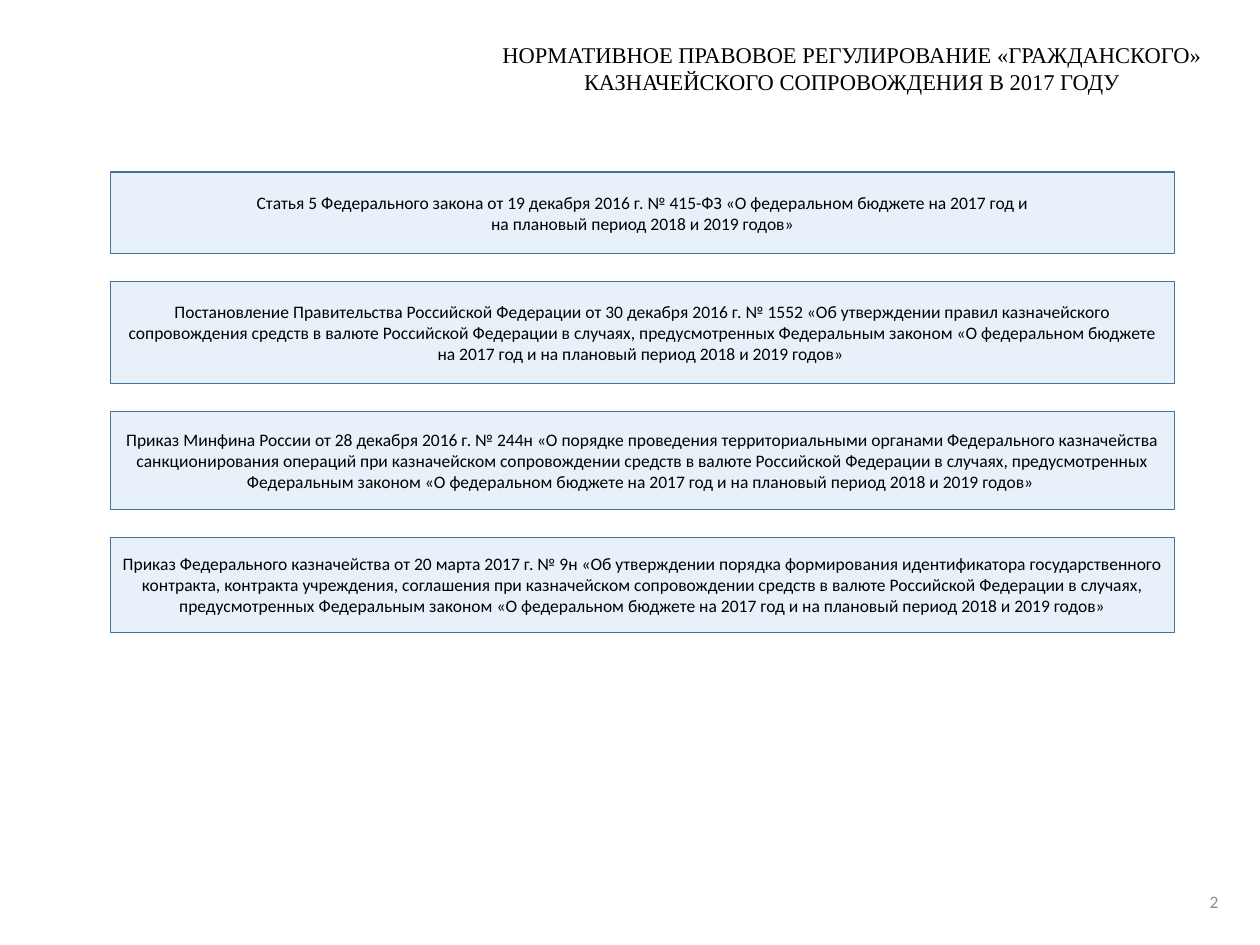
from dataclasses import dataclass

from lxml.etree import SubElement
from pptx import Presentation
from pptx.dml.color import RGBColor
from pptx.enum.shapes import MSO_SHAPE
from pptx.enum.text import MSO_ANCHOR, MSO_AUTO_SIZE, PP_ALIGN
from pptx.oxml.ns import qn
from pptx.util import Inches, Pt

TITLE = "НОРМАТИВНОЕ ПРАВОВОЕ РЕГУЛИРОВАНИЕ «ГРАЖДАНСКОГО» КАЗНАЧЕЙСКОГО СОПРОВОЖДЕНИЯ В 2017 ГОДУ"
PAGE_NUMBER = "2"

REGULATIONS = [
    (0.91, "Статья 5 Федерального закона от 19 декабря 2016 г. № 415-ФЗ «О федеральном бюджете на 2017 год и\n"
           "на плановый период 2018 и 2019 годов»"),
    (1.13, "Постановление Правительства Российской Федерации от 30 декабря 2016 г. № 1552 "
           "«Об утверждении правил казначейского сопровождения средств в валюте Российской Федерации "
           "в случаях, предусмотренных Федеральным законом «О федеральном бюджете на 2017 год "
           "и на плановый период 2018 и 2019 годов» "),
    (1.09, "Приказ Минфина России от 28 декабря 2016 г. № 244н «О порядке проведения территориальными "
           "органами Федерального казначейства санкционирования операций при казначейском сопровождении "
           "средств в валюте Российской Федерации в случаях, предусмотренных Федеральным законом "
           "«О федеральном бюджете на 2017 год и на плановый период 2018 и 2019 годов» "),
    (1.06, "Приказ Федерального казначейства от 20 марта 2017 г. № 9н «Об утверждении порядка "
           "формирования идентификатора государственного контракта, контракта учреждения, соглашения "
           "при казначейском сопровождении средств в валюте Российской Федерации в случаях, "
           "предусмотренных Федеральным законом «О федеральном бюджете на 2017 год "
           "и на плановый период 2018 и 2019 годов»"),
]

BOX_LEFT, BOX_TOP, BOX_WIDTH, BOX_GAP = 1.23, 1.91, 11.82, 0.31


@dataclass(frozen=True)
class Theme:
    ink: str = "000000"
    muted: str = "8C8C8C"
    box_fill: str = "DEEBF7"
    box_opacity: int = 69
    box_line: str = "43739E"
    title_font: str = "Times New Roman"
    body_font: str = "Calibri"
    title_size: int = 18
    body_size: int = 14


THEME = Theme()


def write_text(shape, text, font=THEME.body_font, size=THEME.body_size, color=THEME.ink,
               align=PP_ALIGN.CENTER, anchor=MSO_ANCHOR.MIDDLE, margins=(0.1, 0.05)):
    frame = shape.text_frame
    frame.text = text
    frame.word_wrap = True
    frame.auto_size = MSO_AUTO_SIZE.NONE
    frame.vertical_anchor = anchor
    frame.margin_left = frame.margin_right = Inches(margins[0])
    frame.margin_top = frame.margin_bottom = Inches(margins[1])
    for paragraph in frame.paragraphs:
        paragraph.alignment = align
        paragraph.font.name = font
        paragraph.font.size = Pt(size)
        paragraph.font.color.rgb = RGBColor.from_string(color)


def add_regulation_box(slide, top, height, text):
    shape = slide.shapes.add_shape(
        MSO_SHAPE.RECTANGLE, Inches(BOX_LEFT), Inches(top), Inches(BOX_WIDTH), Inches(height))
    shape.shadow.inherit = False
    shape.fill.solid()
    shape.fill.fore_color.rgb = RGBColor.from_string(THEME.box_fill)
    fill_color = shape.fill._xPr.find(qn("a:solidFill")).find(qn("a:srgbClr"))
    SubElement(fill_color, qn("a:alpha"), val=str(THEME.box_opacity * 1000))
    shape.line.color.rgb = RGBColor.from_string(THEME.box_line)
    shape.line.width = Pt(1)
    write_text(shape, text)


def main():
    presentation = Presentation()
    presentation.slide_width = Inches(14)
    presentation.slide_height = Inches(10.5)
    slide = presentation.slides.add_slide(presentation.slide_layouts[5])

    title = slide.shapes.title
    title.left, title.top = Inches(5.48), Inches(0.4)
    title.width, title.height = Inches(7.97), Inches(0.71)
    write_text(title, TITLE, font=THEME.title_font, size=THEME.title_size, anchor=MSO_ANCHOR.TOP)

    top = BOX_TOP
    for height, text in REGULATIONS:
        add_regulation_box(slide, top, height, text)
        top += height + BOX_GAP

    page_number = slide.shapes.add_textbox(Inches(13.24), Inches(9.74), Inches(0.42), Inches(0.56))
    write_text(page_number, PAGE_NUMBER, color=THEME.muted, align=PP_ALIGN.RIGHT, margins=(0.12, 0.06))

    presentation.save("out.pptx")


if __name__ == "__main__":
    main()
